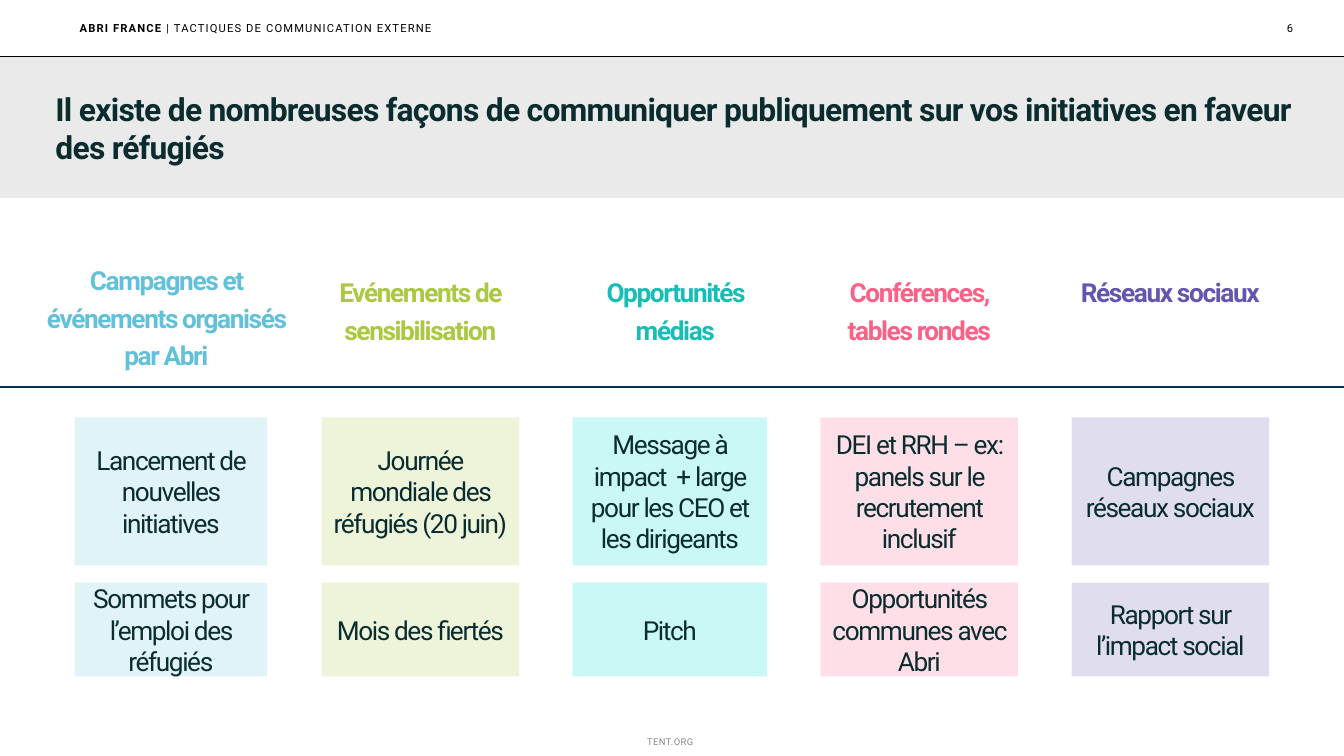
from typing import NamedTuple

from lxml import etree
from pptx import Presentation
from pptx.dml.color import RGBColor
from pptx.enum.shapes import MSO_CONNECTOR, MSO_SHAPE
from pptx.enum.text import MSO_ANCHOR, MSO_AUTO_SIZE, PP_ALIGN
from pptx.oxml.ns import qn
from pptx.util import Pt

LEFT, CENTER, RIGHT = PP_ALIGN.LEFT, PP_ALIGN.CENTER, PP_ALIGN.RIGHT
TOP, MIDDLE = MSO_ANCHOR.TOP, MSO_ANCHOR.MIDDLE
RECT, STRAIGHT = MSO_SHAPE.RECTANGLE, MSO_CONNECTOR.STRAIGHT
NO_FIT = MSO_AUTO_SIZE.NONE

FONT = "Roboto"
DARK, BLACK, GREY, BAND, NAVY = "0A2C2F", "000000", "878787", "EAEAEA", "093158"
SLIDE_W, SLIDE_H = 960, 540
HEADER_H, BAND_H = 40.4, 101.2
BODY_SIZE = 18.7
ROWS = ((298.1, 105.8), (416.2, 67))  # top and height of each row of cards


class Box(NamedTuple):
    left: float
    top: float
    width: float
    height: float


class Style(NamedTuple):
    size: float
    color: str
    bold: bool = False
    spacing: float = 0
    align: PP_ALIGN = LEFT
    anchor: MSO_ANCHOR = MIDDLE


class Column(NamedTuple):
    heading: str
    heading_box: Box
    color: str
    fill: str
    left: float
    width: float
    cards: tuple[str, str]


COLUMNS = (
    Column("Campagnes et événements organisés par Abri", Box(32.4, 184.3, 172.8, 48),
           "62C1D9", "E0F3F7", 53.3, 137.5,
           ("Lancement de nouvelles initiatives", "Sommets pour l’emploi des réfugiés")),
    Column("Evénements de sensibilisation", Box(234.7, 193, 131, 28),
           "AAC842", "EEF4D9", 229.7, 141.1,
           ("Journée mondiale des réfugiés (20 juin)", "Mois des fiertés")),
    Column("Opportunités médias", Box(416.9, 193, 131, 28),
           "18BDB7", "CAF8F7", 409, 139,
           ("Message à impact  + large pour les CEO et les dirigeants", "Pitch")),
    Column("Conférences, tables rondes", Box(591.1, 193, 131, 28),
           "F96187", "FEDFE7", 586.1, 141.1,
           ("DEI et RRH – ex: panels sur le recrutement inclusif",
            "Opportunités communes avec Abri")),
    Column("Réseaux sociaux", Box(770.4, 193, 131, 43),
           "6456AE", "E0DDEF", 765.4, 141.1,
           ("Campagnes réseaux sociaux", "Rapport sur l’impact social")),
)


def rgb(value: str) -> RGBColor:
    return RGBColor.from_string(value)


def format_run(r, style: Style) -> None:
    r.font.name = FONT
    r.font.size = Pt(style.size)
    r.font.bold = style.bold
    r.font.color.rgb = rgb(style.color)
    if style.spacing:
        r.font._element.set("spc", str(round(style.spacing * 100)))


def write(sp, text: str, style: Style, inset: bool = False):
    """Put one paragraph into a shape and return the paragraph."""
    tf = sp.text_frame
    tf.text = text
    tf.word_wrap = True
    tf.auto_size = NO_FIT
    tf.vertical_anchor = style.anchor
    if not inset:
        tf.margin_left = tf.margin_top = tf.margin_right = tf.margin_bottom = 0
    p = tf.paragraphs[0]
    p.alignment = style.align
    format_run(p.runs[0], style)
    return p


def add_text(slide, box: Box, text: str, style: Style):
    return write(slide.shapes.add_textbox(*map(Pt, box)), text, style)


def add_rect(slide, box: Box, fill: str):
    sp = slide.shapes.add_shape(RECT, *map(Pt, box))
    sp.shadow.inherit = False
    sp.fill.solid()
    sp.fill.fore_color.rgb = rgb(fill)
    sp.line.fill.background()
    return sp


def add_rule(slide, top: float, color: str, width: float) -> None:
    line = slide.shapes.add_connector(STRAIGHT, 0, Pt(top), Pt(SLIDE_W), Pt(top))
    line.line.color.rgb = rgb(color)
    line.line.width = Pt(width)
    etree.SubElement(line._element.spPr, qn("a:effectLst"))


def add_header(slide) -> None:
    add_rect(slide, Box(0, HEADER_H, SLIDE_W, BAND_H), BAND)
    add_rule(slide, HEADER_H, BLACK, 0.25)

    label = Style(8, BLACK, bold=True, spacing=0.8)
    p = add_text(slide, Box(56.9, 0, 344.9, HEADER_H), "ABRI FRANCE ", label)
    r = p.add_run()
    r.text = "| TACTIQUES DE COMMUNICATION EXTERNE"
    format_run(r, label._replace(bold=False))
    add_text(slide, Box(699.8, 0, 223.9, HEADER_H), "6", Style(8, BLACK, align=RIGHT))

    # The title placeholder goes in front of the band
    title = slide.shapes.title
    slide.shapes._spTree.append(title._element)
    title.left, title.top, title.width, title.height = map(
        Pt, (39.6, HEADER_H, 884.2, BAND_H))
    write(title, "Il existe de nombreuses façons de communiquer publiquement "
                 "sur vos initiatives en faveur des réfugiés",
          Style(22.7, DARK, bold=True, spacing=-0.5))


def add_column(slide, col: Column) -> None:
    heading = Style(BODY_SIZE, col.color, True, -1, CENTER, TOP)
    p = add_text(slide, col.heading_box, col.heading, heading)
    p.line_spacing = 1.2
    p.space_after = Pt(5.3)
    for (top, height), text in zip(ROWS, col.cards):
        card = add_rect(slide, Box(col.left, top, col.width, height), col.fill)
        write(card, text, Style(BODY_SIZE, DARK, spacing=-1, align=CENTER), inset=True)


def main() -> None:
    prs = Presentation()
    prs.slide_width, prs.slide_height = Pt(SLIDE_W), Pt(SLIDE_H)
    slide = prs.slides.add_slide(prs.slide_layouts[5])

    # Header and title band
    add_header(slide)

    # Columns under and above the dividing line
    add_rule(slide, 276.5, NAVY, 1.75)
    for col in COLUMNS:
        add_column(slide, col)

    # Footer
    add_text(slide, Box(462.2, 525.6, 65.5, 8.6), "TENT.ORG",
             Style(6.7, GREY, spacing=0.3))
    prs.save("out.pptx")


if __name__ == "__main__":
    main()
